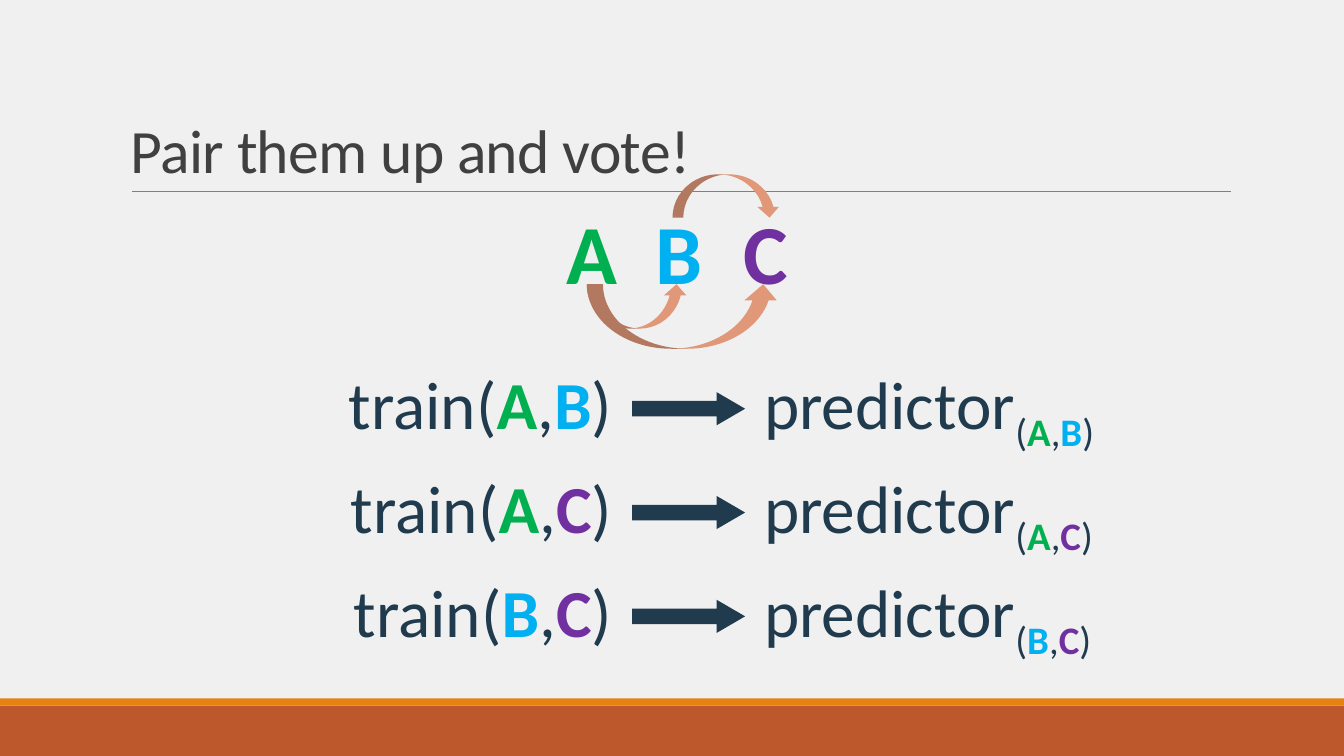
from pptx import Presentation
from pptx import util as u
from pptx.dml.color import RGBColor
from pptx.enum import shapes, text

PX = 9144  # EMU in one px, 100 px to the inch
FONT = "Calibri"

BACKGROUND = RGBColor(0xF0, 0xF0, 0xF0)
RUST = RGBColor(0xBD, 0x58, 0x2C)
ORANGE = RGBColor(0xE4, 0x83, 0x12)
SALMON = RGBColor(0xE0, 0x98, 0x78)
GRAY = RGBColor(0x80, 0x80, 0x80)
CHARCOAL = RGBColor(0x40, 0x40, 0x40)
NAVY = RGBColor(0x20, 0x3A, 0x4E)
CLASS_COLORS = {
    "A": RGBColor(0x00, 0xB0, 0x50),
    "B": RGBColor(0x00, 0xB0, 0xF0),
    "C": RGBColor(0x70, 0x30, 0xA0),
}


def px(*lengths):
    return [u.Emu(length * PX) for length in lengths]


def add_filled_shape(parent, kind, box, color):
    shape = parent.shapes.add_shape(kind, *px(*box))
    shape.shadow.inherit = False
    shape.fill.solid()
    shape.fill.fore_color.rgb = color
    shape.line.fill.background()
    return shape


def add_text_box(parent, box, align=text.PP_ALIGN.LEFT):
    frame = parent.shapes.add_textbox(*px(*box)).text_frame
    frame.word_wrap = True
    frame.auto_size = text.MSO_AUTO_SIZE.SHAPE_TO_FIT_TEXT
    paragraph = frame.paragraphs[0]
    paragraph.alignment = align
    return paragraph


def add_run(paragraph, words, size, color, bold=False, subscript=False):
    run = paragraph.add_run()
    run.text = words
    font = run.font
    font.name, font.size, font.bold = FONT, u.Pt(size), bold
    font.color.rgb = color
    if subscript:
        run._r.get_or_add_rPr().set("baseline", "-25000")
    return run


def add_pair(paragraph, prefix, pair, subscript=False):
    """Write (X,Y) after the prefix, each class in its own colour."""
    first, second = pair
    add_run(paragraph, prefix, 48, NAVY)
    for words in ("(", first, ",", second, ")"):
        add_run(paragraph, words, 48, CLASS_COLORS.get(words, NAVY),
                words in CLASS_COLORS, subscript)


def add_training_row(slide, top, pair):
    group = slide.shapes.add_group_shape()
    add_pair(add_text_box(group, (251, top, 366, 91), text.PP_ALIGN.RIGHT),
             "train", pair)
    arrow = add_filled_shape(group, shapes.MSO_SHAPE.RIGHT_ARROW,
                             (627, top + 34, 112, 33), NAVY)
    arrow.adjustments[0] = 0.466
    arrow.adjustments[1] = 0.859
    add_pair(add_text_box(group, (748, top, 419, 91)),
             "predictor", pair, subscript=True)


def add_title(slide, words):
    paragraph = add_text_box(slide, (120, 31, 1100, 159))
    paragraph.line_spacing = 0.85
    run = add_run(paragraph, words, 44, CHARCOAL)
    run._r.get_or_add_rPr().set("spc", "-50")
    frame = slide.shapes[-1].text_frame
    frame.auto_size = text.MSO_AUTO_SIZE.NONE
    frame.vertical_anchor = text.MSO_ANCHOR.BOTTOM


def add_rule(slide, left, right, y):
    rule = slide.shapes.add_connector(shapes.MSO_CONNECTOR.STRAIGHT,
                                      *px(left, y, right, y))
    rule.line.color.rgb = GRAY
    rule.line.width = u.Pt(0.5)
    properties = rule._element.spPr
    properties.append(properties.makeelement(
        "{http://schemas.openxmlformats.org/drawingml/2006/main}effectLst", {}))


def add_curved_arrow(slide, box, flipped=False):
    arrow = add_filled_shape(slide, shapes.MSO_SHAPE.CURVED_UP_ARROW, box, SALMON)
    if flipped:
        arrow._element.spPr.xfrm.set("flipV", "1")


def main():
    presentation = Presentation()
    presentation.slide_width, presentation.slide_height = px(1333, 750)
    slide = presentation.slides.add_slide(presentation.slide_layouts[6])
    slide.background.fill.solid()
    slide.background.fill.fore_color.rgb = BACKGROUND

    # Footer bands, title and rule
    add_filled_shape(slide, shapes.MSO_SHAPE.RECTANGLE, (0, 700, 1333, 50), RUST)
    add_filled_shape(slide, shapes.MSO_SHAPE.RECTANGLE, (0, 693, 1333, 7), ORANGE)
    add_rule(slide, 131, 1221, 190)
    add_title(slide, "Pair them up and vote!")

    # Classes
    for column, (letter, color) in enumerate(CLASS_COLORS.items()):
        paragraph = add_text_box(slide, (552 + 88 * column, 194, 69, 111))
        add_run(paragraph, letter, 60, color, bold=True)

    # Arrows that join each pair of classes
    add_curved_arrow(slide, (582, 282, 100, 44))
    add_curved_arrow(slide, (582, 282, 191, 64))
    add_curved_arrow(slide, (667, 173, 107, 43), flipped=True)

    # One predictor for each pair
    for row, pair in enumerate(("AB", "AC", "BC")):
        add_training_row(slide, 355 + 103 * row, pair)

    presentation.save("out.pptx")


if __name__ == "__main__":
    main()
